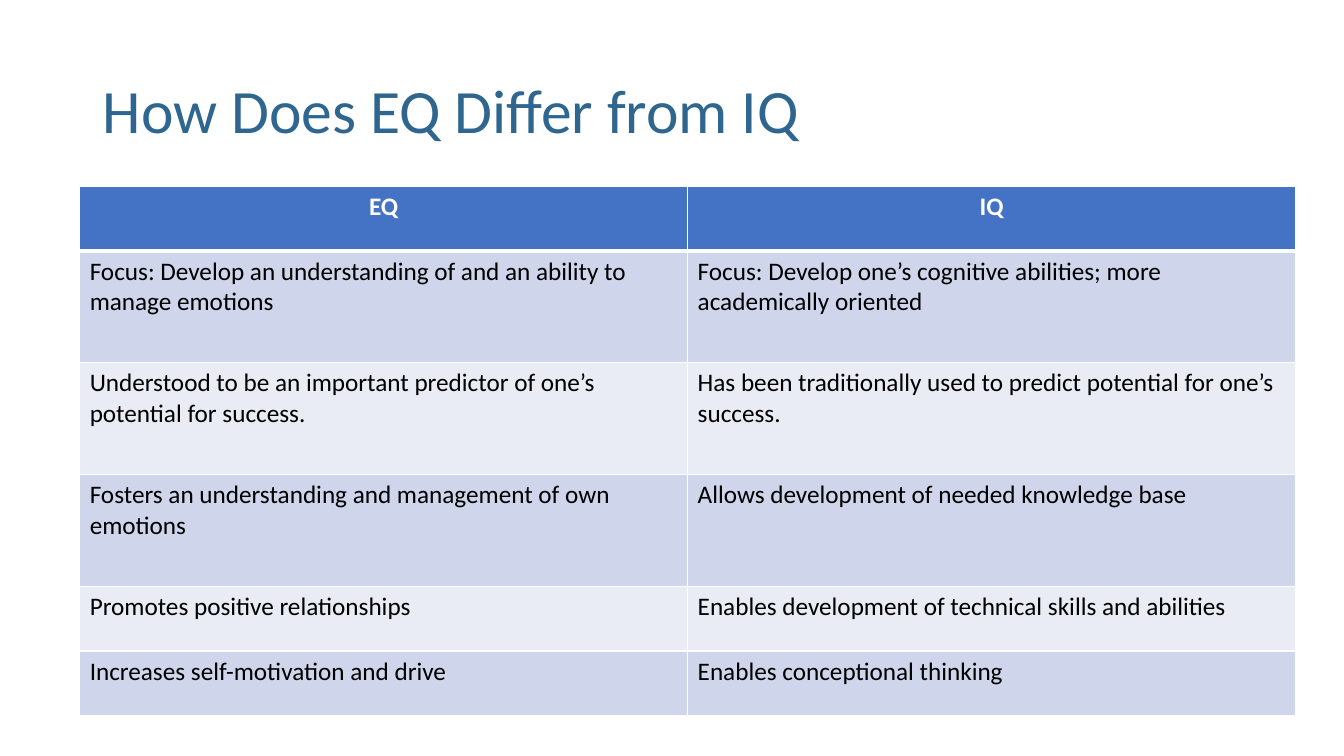
from lxml.etree import SubElement
from pptx import Presentation
from pptx.dml.color import RGBColor
from pptx.enum.text import MSO_ANCHOR as ANCHOR, PP_ALIGN as ALIGN
from pptx.oxml.ns import qn
from pptx.util import Emu, Pt

COLORS = {
    "title": "2F6690",
    "header": "4472C4",
    "band_dark": "CFD5EA",
    "band_light": "E9EBF5",
    "white": "FFFFFF",
    "black": "000000",
}

ROWS = [
    ("EQ", "IQ"),
    ("Focus: Develop an understanding of and an ability to manage emotions",
     "Focus: Develop one’s cognitive abilities; more academically oriented"),
    ("Understood to be an important predictor of one’s potential for success.",
     "Has been traditionally used to predict potential for one’s success."),
    ("Fosters an understanding and management of own emotions",
     "Allows development of needed knowledge base"),
    ("Promotes positive relationships",
     "Enables development of technical skills and abilities"),
    ("Increases self-motivation and drive", "Enables conceptional thinking"),
]
ROW_HEIGHTS = [64, 111, 111, 111, 64, 64]


def px(n):
    return Emu(n * 9144)


def rgb(name):
    return RGBColor.from_string(COLORS[name])


class Deck:
    font = "Calibri"

    def __init__(self, width, height):
        self.prs = Presentation()
        self.prs.slide_width, self.prs.slide_height = px(width), px(height)
        self.s = self.prs.slides.add_slide(self.prs.slide_layouts[6])

    def format(self, p, size, color, bold=False):
        for r in p.runs:
            r.font.name = self.font
            r.font.size = Pt(size)
            r.font.bold = bold
            r.font.color.rgb = rgb(color)

    def title(self, text, x, y, w, h):
        tf = self.s.shapes.add_textbox(px(x), px(y), px(w), px(h)).text_frame
        tf.word_wrap = True
        tf.vertical_anchor = ANCHOR.MIDDLE
        tf.text = text
        p = tf.paragraphs[0]
        p.line_spacing = 0.9
        self.format(p, 44, "title")

    def borders(self, cell, widths):
        tcPr = cell._tc.get_or_add_tcPr()
        for i, (side, width) in enumerate(widths.items()):
            ln = SubElement(tcPr, qn(f"a:ln{side}"), w=str(Pt(width)))
            fill = SubElement(ln, qn("a:solidFill"))
            SubElement(fill, qn("a:srgbClr"), val=COLORS["white"])
            tcPr.insert(i, ln)

    def table(self, rows, x, y, col_width, heights):
        cols = len(rows[0])
        sp = self.s.shapes.add_table(len(rows), cols, px(x), px(y),
                                     px(col_width * cols), px(sum(heights)))
        table = sp.table
        for col in table.columns:
            col.width = px(col_width)
        for i, (texts, height) in enumerate(zip(rows, heights)):
            table.rows[i].height = px(height)
            header = i == 0
            band = "header" if header else "band_dark" if i % 2 else "band_light"
            for j, text in enumerate(texts):
                cell = table.cell(i, j)
                cell.text = text
                cell.fill.solid()
                cell.fill.fore_color.rgb = rgb(band)
                p = cell.text_frame.paragraphs[0]
                p.alignment = ALIGN.CENTER if header else ALIGN.LEFT
                self.format(p, 18, "white" if header else "black", header)
                self.borders(cell, {"L": 1, "R": 1, "T": 3 if i == 1 else 1,
                                    "B": 3 if header else 1})


def main():
    deck = Deck(1333, 750)
    deck.title("How Does EQ Differ from IQ", 92, 40, 1150, 145)
    deck.table(ROWS, 79, 185, 603, ROW_HEIGHTS)
    deck.prs.save("out.pptx")


if __name__ == "__main__":
    main()
